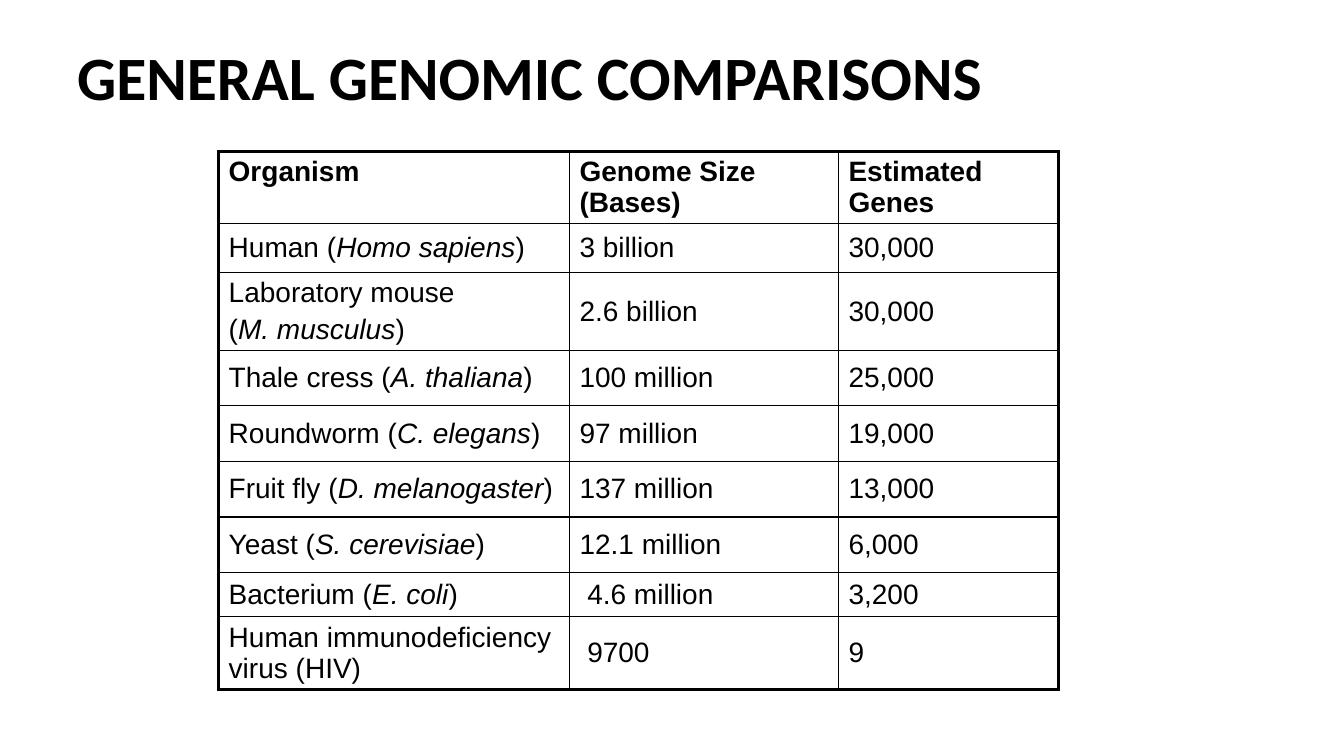
from lxml.etree import SubElement
from pptx import Presentation
from pptx.dml.color import RGBColor
from pptx.enum.text import MSO_ANCHOR, PP_ALIGN
from pptx.oxml.ns import qn
from pptx.util import Cm, Pt

BLACK = RGBColor(0x00, 0x00, 0x00)
THIN, THICK = Pt(1), Pt(2.25)

COLUMN_WIDTHS = [8.84, 6.78, 5.54]
ROW_HEIGHTS = [0.84, 1.22, 1.65, 1.4, 1.4, 1.4, 1.4, 1.12, 1.65]

# Asterisks enclose italic species names.
GENOMES = [
    ("Organism", "Genome Size (Bases)", "Estimated Genes"),
    ("Human (*Homo sapiens*)", "3 billion", "30,000"),
    ("Laboratory mouse\n(*M. musculus*)", "2.6 billion", "30,000"),
    ("Thale cress (*A. thaliana*)", "100 million", "25,000"),
    ("Roundworm (*C. elegans*)", "97 million", "19,000"),
    ("Fruit fly (*D. melanogaster*)", "137 million", "13,000"),
    ("Yeast (*S. cerevisiae*)", "12.1 million", "6,000"),
    ("Bacterium (*E. coli*)", " 4.6 million", "3,200"),
    ("Human immunodeficiency virus (HIV)", " 9700", "9"),
]


def write_text(text_frame, text, font="Arial", size=20, bold=False,
               color=BLACK, line_spacing=None, space_between=4):
    """Fill a text frame, one paragraph per line, with *italic* parts."""
    for index, line in enumerate(text.split("\n")):
        if index == 0:
            paragraph = text_frame.paragraphs[0]
        else:
            paragraph = text_frame.add_paragraph()
            paragraph.space_before = Pt(space_between)
        paragraph.alignment = PP_ALIGN.LEFT
        if line_spacing:
            paragraph.line_spacing = line_spacing
        for part_index, part in enumerate(line.split("*")):
            run = paragraph.add_run()
            run.text = part
            run.font.name = font
            run.font.size = Pt(size)
            run.font.bold = bold
            run.font.italic = part_index % 2 == 1
            run.font.color.rgb = color


def set_borders(cell, **widths):
    """Draw solid borders; the keywords are the sides L, R, T and B."""
    properties = cell._tc.get_or_add_tcPr()
    for side, width in widths.items():
        line = SubElement(properties, qn(f"a:ln{side}"), w=str(width))
        fill = SubElement(line, qn("a:solidFill"))
        SubElement(fill, qn("a:srgbClr"), val=str(BLACK))


class SlideBuilder:
    def __init__(self, presentation):
        self.slide = presentation.slides.add_slide(presentation.slide_layouts[5])

    def add_title(self, text, left, top, width, height):
        title = self.slide.shapes.title
        title.left, title.top = Cm(left), Cm(top)
        title.width, title.height = Cm(width), Cm(height)
        title.text_frame.vertical_anchor = MSO_ANCHOR.MIDDLE
        write_text(title.text_frame, text, font="Calibri", size=44, bold=True,
                   line_spacing=0.9)

    def add_table(self, records, left, top, column_widths, row_heights):
        table = self.slide.shapes.add_table(
            len(records), len(column_widths), Cm(left), Cm(top),
            Cm(sum(column_widths)), Cm(sum(row_heights))).table
        table.first_row = table.horz_banding = False
        for column, width in zip(table.columns, column_widths):
            column.width = Cm(width)
        for row, height in zip(table.rows, row_heights):
            row.height = Cm(height)

        last_row, last_column = len(records) - 1, len(column_widths) - 1
        for row_index, record in enumerate(records):
            header = row_index == 0
            for column_index, text in enumerate(record):
                cell = table.cell(row_index, column_index)
                cell.vertical_anchor = MSO_ANCHOR.TOP if header else MSO_ANCHOR.MIDDLE
                set_borders(cell,
                            L=THICK if column_index == 0 else THIN,
                            R=THICK if column_index == last_column else THIN,
                            T=THICK if header else THIN,
                            B=THICK if row_index == last_row else THIN)
                cell.fill.background()
                write_text(cell.text_frame, text, bold=header)


def main():
    presentation = Presentation()
    presentation.slide_width, presentation.slide_height = Cm(33.87), Cm(19.05)
    builder = SlideBuilder(presentation)
    builder.add_title("GENERAL GENOMIC COMPARISONS", 1.69, 0.43, 30.48, 3.18)
    builder.add_table(GENOMES, 5.51, 3.81, COLUMN_WIDTHS, ROW_HEIGHTS)
    presentation.save("out.pptx")


if __name__ == "__main__":
    main()
